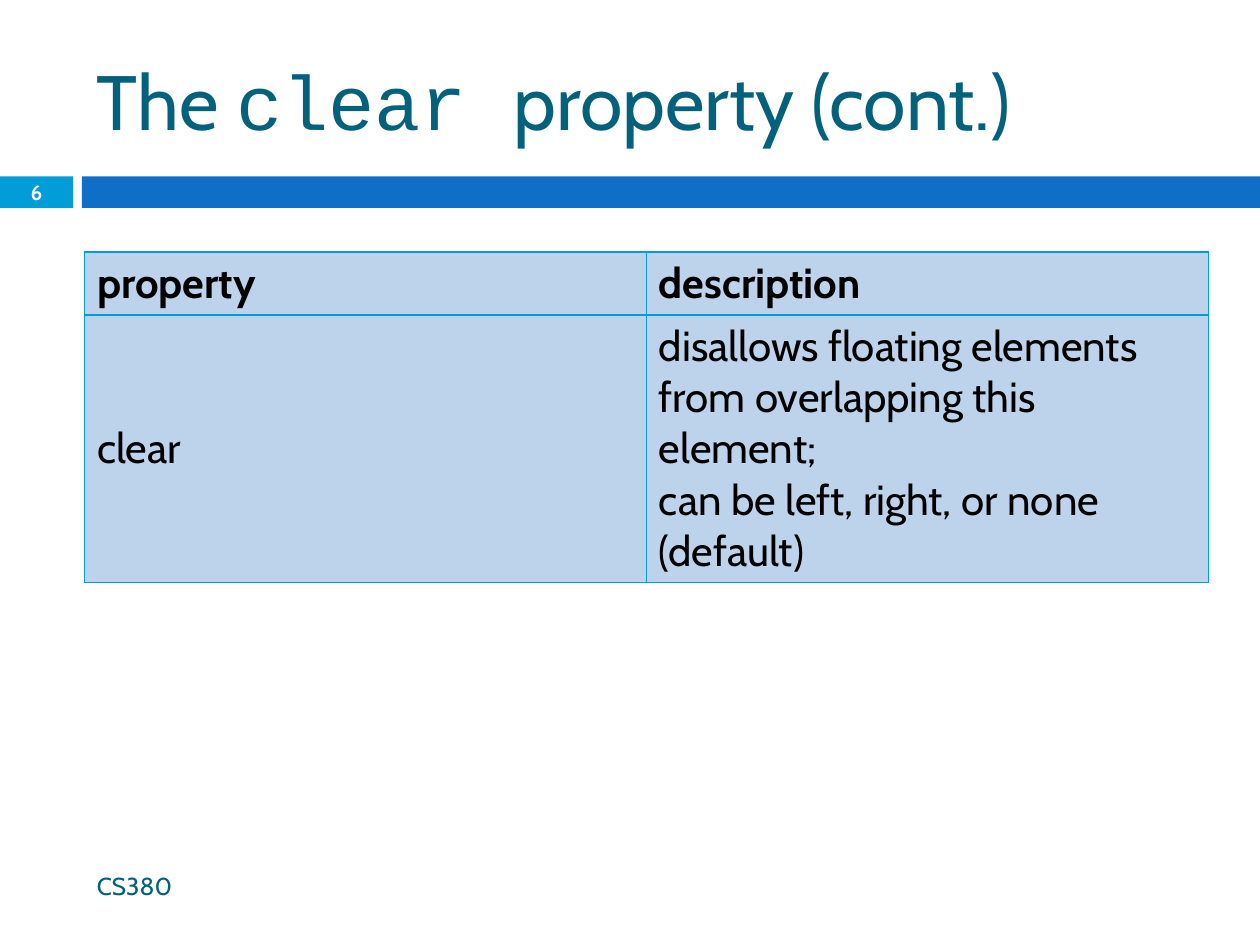
from lxml.etree import SubElement
from pptx import Presentation
from pptx.dml.color import RGBColor
from pptx.enum.shapes import MSO_SHAPE
from pptx.enum.text import MSO_ANCHOR, PP_ALIGN
from pptx.oxml.ns import qn
from pptx.util import Inches, Pt

TEAL, CYAN, BLUE, CELL_BLUE = "04617B", "009DD9", "0F6FC6", "BDD3EC"
MARGIN, CONTENT_WIDTH = 0.67, 8.92
TITLE = {"size": Pt(44), "name": "Cabin", "color": TEAL}
FOOTER = {**TITLE, "size": Pt(14)}
NUMBER = {"size": Pt(11.9), "name": "Cabin", "color": "FFFFFF", "bold": True}
BODY = {"size": Pt(24), "name": "Cabin", "color": "000000", "bold": False}
HEADER = {**BODY, "bold": True}
ROWS = [
    ("property", "description"),
    ("clear", "disallows floating elements from overlapping this element; \n"
              "can be left, right, or none (default)"),
]


def paint(target, color):
    target.solid()
    target.fore_color.rgb = RGBColor.from_string(color)


def format_run(run, style):
    for name, value in style.items():
        if name == "color":
            paint(run.font.fill, value)
        else:
            setattr(run.font, name, value)


def add_bar(slide, left, width, color):
    bar = slide.shapes.add_shape(MSO_SHAPE.RECTANGLE, Inches(left), Inches(1.4),
                                 Inches(width), Inches(0.25))
    bar.shadow.inherit = False
    paint(bar.fill, color)
    bar.line.fill.background()


def add_text(slide, box, runs, align=PP_ALIGN.LEFT, inset=0.1):
    frame = slide.shapes.add_textbox(*map(Inches, box)).text_frame
    settings = {"word_wrap": True, "vertical_anchor": MSO_ANCHOR.MIDDLE,
                "margin_left": Inches(inset), "margin_right": Inches(inset),
                "margin_top": 0, "margin_bottom": 0}
    for name, value in settings.items():
        setattr(frame, name, value)
    paragraph = frame.paragraphs[0]
    paragraph.alignment = align
    for text, style in runs:
        run = paragraph.add_run()
        run.text = text
        format_run(run, style)


def add_borders(cell, color, width):
    properties = cell._tc.get_or_add_tcPr()
    for index, side in enumerate(("lnL", "lnR", "lnT", "lnB")):
        line = properties.makeelement(qn(f"a:{side}"), {"w": str(Pt(width))})
        fill = SubElement(line, qn("a:solidFill"))
        SubElement(fill, qn("a:srgbClr"), val=color)
        # Borders come before the cell fill
        properties.insert(index, line)


def add_property_table(slide):
    heights = (0.5, 2.12)
    table = slide.shapes.add_table(
        len(ROWS), len(ROWS[0]), Inches(MARGIN), Inches(2),
        Inches(CONTENT_WIDTH), Inches(sum(heights))).table
    for row, height, texts, style in zip(table.rows, heights, ROWS, (HEADER, BODY)):
        row.height = Inches(height)
        for cell, text in zip(row.cells, texts):
            cell.vertical_anchor = MSO_ANCHOR.MIDDLE
            paint(cell.fill, CELL_BLUE)
            add_borders(cell, CYAN, 0.79)
            paragraph = cell.text_frame.paragraphs[0]
            # A newline becomes a line break within the paragraph
            paragraph.text = text.replace("\n", "\v")
            for run in paragraph.runs:
                format_run(run, style)


def main():
    presentation = Presentation()
    presentation.slide_width, presentation.slide_height = Inches(10), Inches(7.5)
    slide = presentation.slides.add_slide(presentation.slide_layouts[6])

    # Divider bars
    add_bar(slide, 0, 0.58, CYAN)
    add_bar(slide, 0.65, 9.35, BLUE)

    # Title and table
    add_text(slide, (MARGIN, 0.25, CONTENT_WIDTH, 1.08), [
        ("The ", TITLE),
        ("clear ", {**TITLE, "name": "Courier New"}),
        ("property (cont.)", TITLE),
    ])
    add_property_table(slide)

    # Footer and slide number
    add_text(slide, (MARGIN, 6.83, 5.93, 0.4), [("CS380", FOOTER)])
    add_text(slide, (0, 1.39, 0.58, 0.27), [("6", NUMBER)], PP_ALIGN.CENTER, 0)

    presentation.save("out.pptx")


if __name__ == "__main__":
    main()
